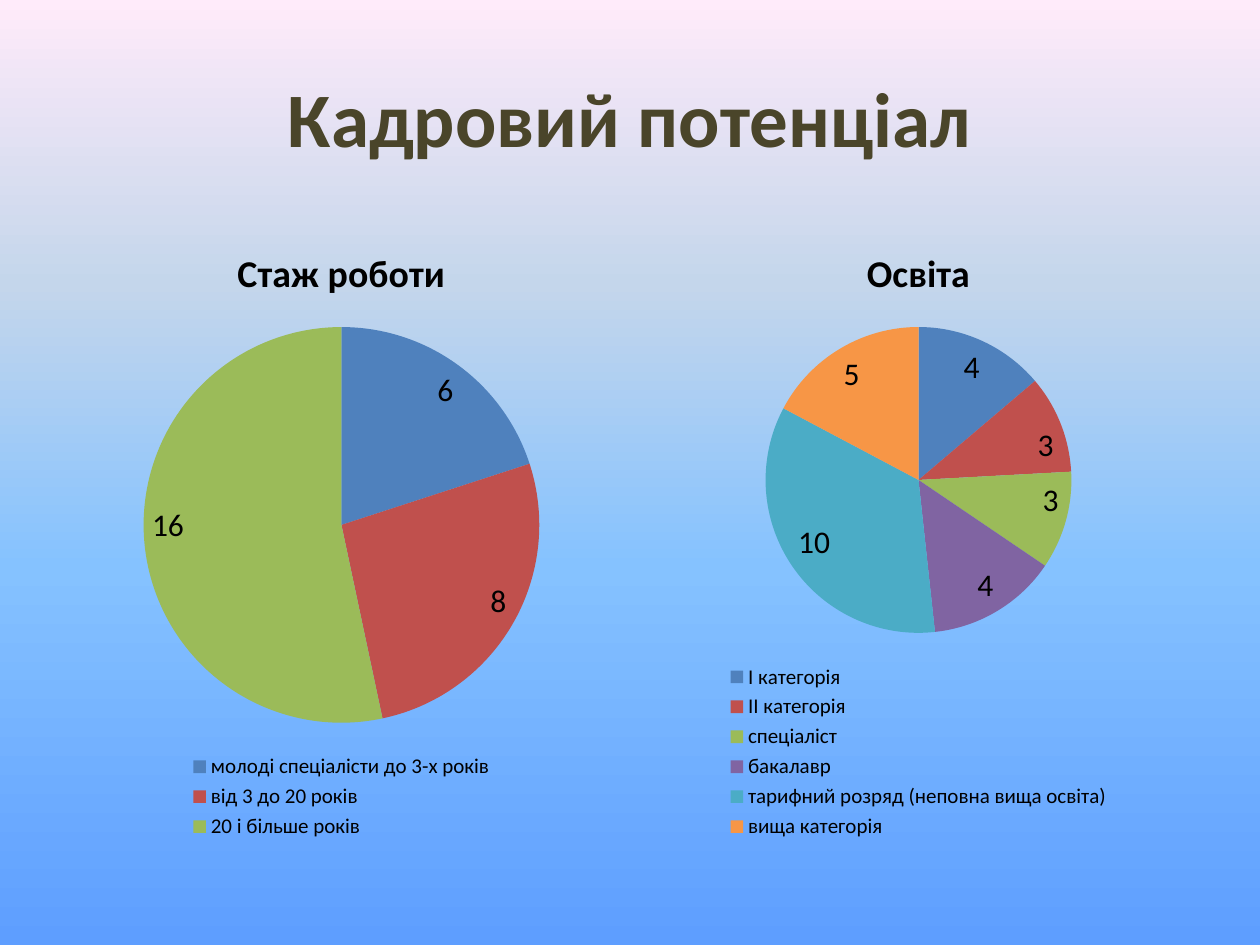
from dataclasses import dataclass

from lxml import etree
from pptx import Presentation
from pptx.chart.data import CategoryChartData
from pptx.dml.color import RGBColor
from pptx.enum.chart import XL_CHART_TYPE, XL_LABEL_POSITION, XL_LEGEND_POSITION
from pptx.enum.text import MSO_ANCHOR, PP_ALIGN
from pptx.oxml.ns import qn
from pptx.util import Inches, Pt

PIE = XL_CHART_TYPE.PIE
INSIDE_END = XL_LABEL_POSITION.INSIDE_END
LEGEND_BOTTOM = XL_LEGEND_POSITION.BOTTOM
MIDDLE = MSO_ANCHOR.MIDDLE
CENTER = PP_ALIGN.CENTER


@dataclass(frozen=True)
class Theme:
    font: str = "Calibri"
    heading: str = "4A452A"
    text: str = "000000"
    slices: tuple = ("4F81BD", "C0504D", "9BBB59", "8064A2", "4BACC6", "F79646")
    sky: tuple = ((0, "5E9EFF"), (40, "85C2FF"), (70, "C4D6EB"), (100, "FFEBFA"))
    heading_size: float = 44
    chart_title_size: float = 21.6
    label_size: float = 18
    legend_size: float = 12


theme = Theme()


def style_font(font, size, color, bold=False):
    font.name = theme.font
    font.size = Pt(size)
    font.bold = bold
    font.color.rgb = RGBColor.from_string(color)


deck = Presentation()
deck.slide_width = Inches(10)
deck.slide_height = Inches(7.5)
page = deck.slides.add_slide(deck.slide_layouts[6])

# Background gradient, running from bottom to top
background = page.background.fill
background.gradient()
background.gradient_angle = 90
stops = page.element.find(".//" + qn("a:gsLst"))
for stop in list(stops):
    stops.remove(stop)
for percent, color in theme.sky:
    stop = etree.SubElement(stops, qn("a:gs"), pos=str(percent * 1000))
    etree.SubElement(stop, qn("a:srgbClr"), val=color)

# Heading
box = page.shapes.add_textbox(Inches(0.5), Inches(0.3), Inches(9), Inches(1.25))
frame = box.text_frame
frame.word_wrap = True
frame.vertical_anchor = MIDDLE
para = frame.paragraphs[0]
para.alignment = CENTER
span = para.add_run()
span.text = "Кадровий потенціал"
style_font(span.font, theme.heading_size, theme.heading, bold=True)

# Two pie charts side by side: left edge, title, categories with values
pies = (
    (0.5, "Стаж роботи", {
        "молоді спеціалісти до 3-х років": 6,
        "від 3 до 20 років": 8,
        "20 і більше років": 16,
    }),
    (5.08, "Освіта", {
        "І категорія": 4,
        "ІІ категорія": 3,
        "спеціаліст": 3,
        "бакалавр": 4,
        "тарифний розряд (неповна вища освіта)": 10,
        "вища категорія": 5,
    }),
)
for left, title, staff in pies:
    data = CategoryChartData()
    data.categories = list(staff)
    data.add_series(title, list(staff.values()))
    chart = page.shapes.add_chart(
        PIE, Inches(left), Inches(1.75), Inches(4.42), Inches(4.95), data
    ).chart
    style_font(chart.font, theme.label_size, theme.text)

    # Chart title
    chart.has_title = True
    chart.chart_title.include_in_layout = False
    span = chart.chart_title.text_frame.paragraphs[0].add_run()
    span.text = title
    style_font(span.font, theme.chart_title_size, theme.text, bold=True)

    # Legend
    chart.has_legend = True
    chart.legend.position = LEGEND_BOTTOM
    chart.legend.include_in_layout = False
    style_font(chart.legend.font, theme.legend_size, theme.text)

    # Slices and value labels
    plot = chart.plots[0]
    plot.vary_by_categories = True
    for index, color in enumerate(theme.slices[:len(staff)]):
        fill = plot.series[0].points[index].format.fill
        fill.solid()
        fill.fore_color.rgb = RGBColor.from_string(color)
    plot.has_data_labels = True
    labels = plot.data_labels
    labels.show_value = True
    labels.show_percentage = False
    labels.position = INSIDE_END
    style_font(labels.font, theme.label_size, theme.text)

deck.save("out.pptx")
